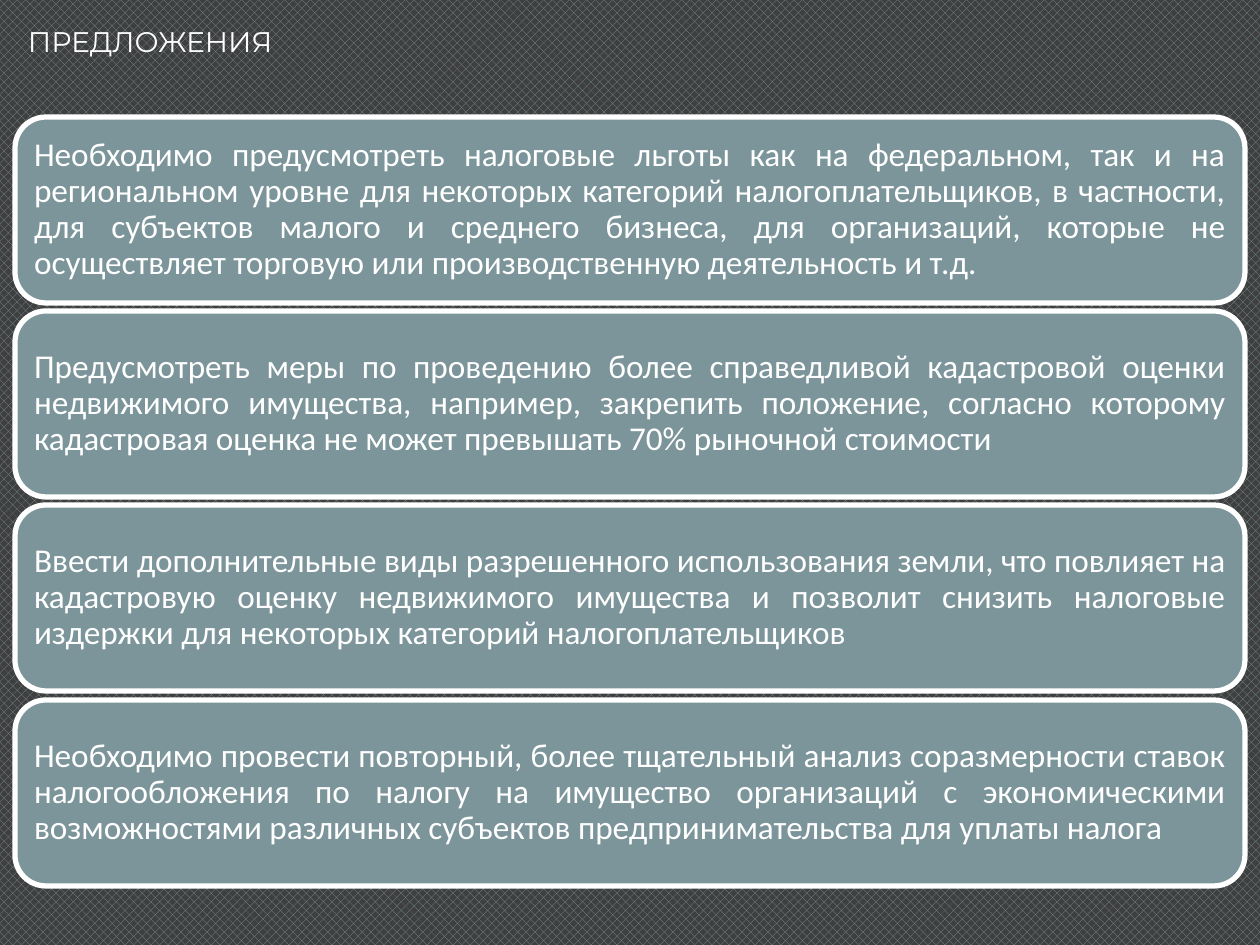
from dataclasses import dataclass

from pptx import Presentation
from pptx.dml.color import RGBColor
from pptx.enum.dml import MSO_PATTERN
from pptx.enum.shapes import MSO_SHAPE
from pptx.enum.text import MSO_ANCHOR, MSO_AUTO_SIZE, PP_ALIGN
from pptx.util import Emu, Pt

EMU_PER_PX = 914400 // 126
TITLE_ONLY_LAYOUT = 5

TITLE = "ПРЕДЛОЖЕНИЯ"
PROPOSALS = (
    "Необходимо предусмотреть налоговые льготы как на федеральном, так и на "
    "региональном уровне для некоторых категорий налогоплательщиков, в частности, "
    "для субъектов малого и среднего бизнеса, для организаций, которые не "
    "осуществляет торговую или производственную деятельность и т.д.",
    "Предусмотреть меры по проведению более справедливой кадастровой оценки "
    "недвижимого имущества, например, закрепить положение, согласно которому "
    "кадастровая оценка не может превышать 70% рыночной стоимости",
    "Ввести дополнительные виды разрешенного использования земли, что повлияет на "
    "кадастровую оценку недвижимого имущества и позволит снизить налоговые "
    "издержки для некоторых категорий налогоплательщиков",
    "Необходимо провести повторный, более тщательный анализ соразмерности ставок "
    "налогообложения по налогу на имущество организаций с экономическими "
    "возможностями различных субъектов предпринимательства для уплаты налога",
)


@dataclass(frozen=True)
class Theme:
    white: RGBColor = RGBColor.from_string("FFFFFF")
    card: RGBColor = RGBColor.from_string("7C959A")
    dark: RGBColor = RGBColor.from_string("3F3F3F")
    title_font: str = "Montserrat"
    body_font: str = "Calibri"
    title_size: float = 16.2
    body_size: float = 19
    outline: float = 3


THEME = Theme()


def px(length):
    return Emu(length * EMU_PER_PX)


def write_text(shape, text, *, font, size, align, inset_x, inset_y, line_spacing=1.0):
    frame = shape.text_frame
    frame.word_wrap = True
    frame.auto_size = MSO_AUTO_SIZE.NONE
    frame.vertical_anchor = MSO_ANCHOR.MIDDLE
    frame.margin_left = frame.margin_right = px(inset_x)
    frame.margin_top = frame.margin_bottom = px(inset_y)
    paragraph = frame.paragraphs[0]
    paragraph.alignment = align
    paragraph.line_spacing = line_spacing
    paragraph.space_before = Pt(0)
    run = paragraph.add_run()
    run.text = text
    run.font.name = font
    run.font.size = Pt(size)
    run.font.color.rgb = THEME.white


def set_background(slide):
    fill = slide.background.fill
    fill.patterned()
    fill.pattern = MSO_PATTERN.PERCENT_50
    fill.fore_color.rgb = THEME.card
    fill.back_color.rgb = THEME.dark


def place_title(slide, text):
    title = slide.shapes.title
    title.left, title.top, title.width, title.height = map(px, (15, 16, 621, 50))
    write_text(title, text, font=THEME.title_font, size=THEME.title_size,
               align=PP_ALIGN.LEFT, inset_x=13, inset_y=6)


def add_card(slide, text, left, top, width, height):
    card = slide.shapes.add_shape(MSO_SHAPE.ROUNDED_RECTANGLE,
                                  *map(px, (left, top, width, height)))
    card.shadow.inherit = False
    card.fill.solid()
    card.fill.fore_color.rgb = THEME.card
    card.line.color.rgb = THEME.white
    card.line.width = Pt(THEME.outline)
    write_text(card, text, font=THEME.body_font, size=THEME.body_size,
               align=PP_ALIGN.JUSTIFY, inset_x=10, inset_y=10, line_spacing=0.9)


def add_card_stack(slide, texts, left=15, top=117, width=1230, height=186, last_top=700):
    """Spread the cards evenly from top to last_top."""
    for index, text in enumerate(texts):
        offset = (last_top - top) * index // (len(texts) - 1)
        add_card(slide, text, left, top + offset, width, height)


def main():
    presentation = Presentation()
    presentation.slide_width, presentation.slide_height = px(1260), px(945)
    slide = presentation.slides.add_slide(presentation.slide_layouts[TITLE_ONLY_LAYOUT])
    set_background(slide)
    place_title(slide, TITLE)
    add_card_stack(slide, PROPOSALS)
    presentation.save("out.pptx")


if __name__ == "__main__":
    main()
